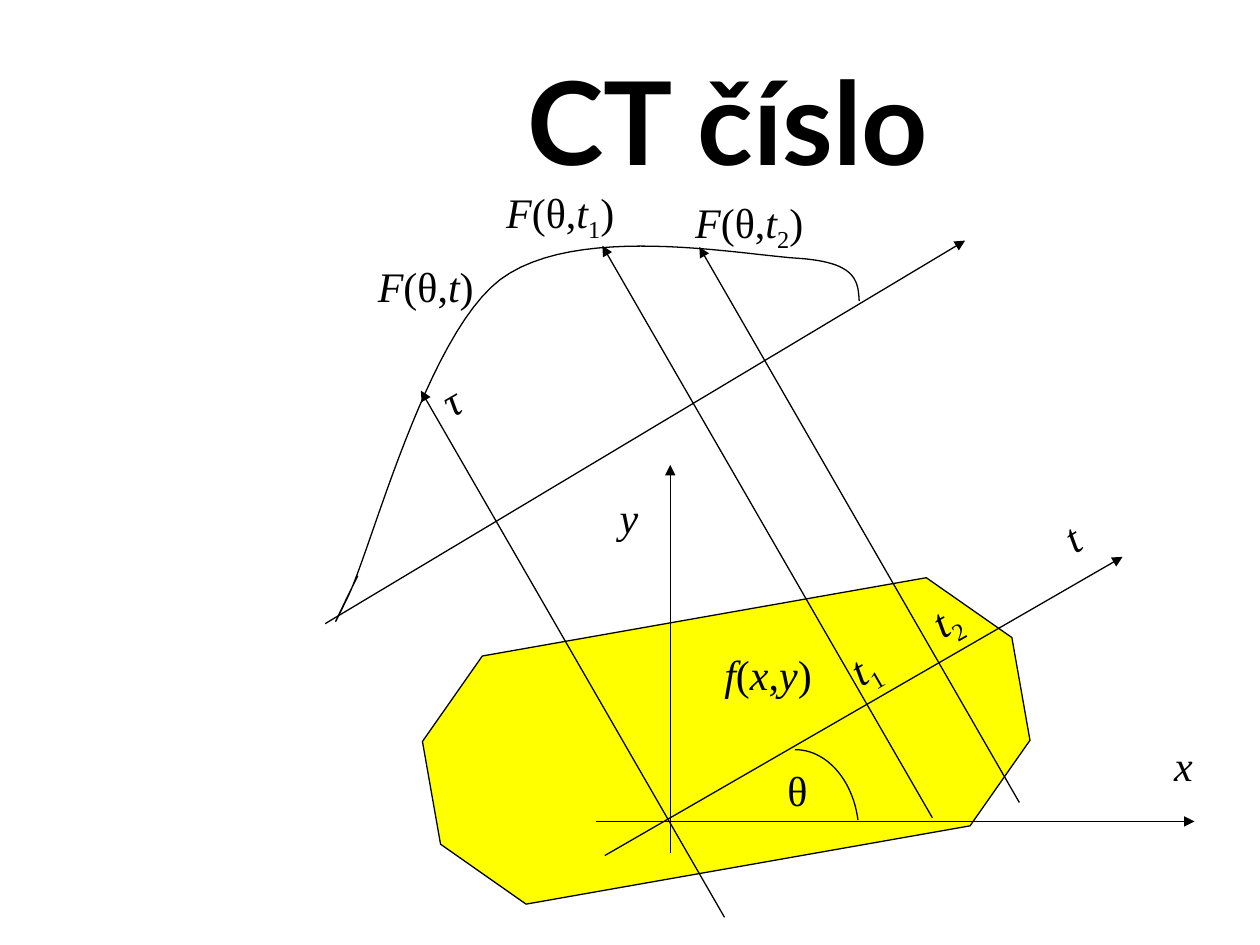
from itertools import groupby
from lxml import etree
from pptx import Presentation
from pptx.dml.color import RGBColor
from pptx.enum.shapes import MSO_CONNECTOR, MSO_SHAPE
from pptx.enum.text import MSO_ANCHOR, MSO_AUTO_SIZE, PP_ALIGN
from pptx.oxml import parse_xml
from pptx.oxml.ns import nsdecls, qn
from pptx.util import Pt


def rgb(value):
    return RGBColor.from_string(value)


def set_line(s):
    s.line.color.rgb = rgb("000000")
    s.line.width = Pt(0.75)


prs = Presentation()
prs.slide_width, prs.slide_height = Pt(720), Pt(540)
slide = prs.slides.add_slide(prs.slide_layouts[6])
sp = slide.shapes

# Title
tf = sp.add_textbox(Pt(146), Pt(15), Pt(540), Pt(96.5)).text_frame
tf.word_wrap = True
tf.vertical_anchor = MSO_ANCHOR.BOTTOM
p = tf.paragraphs[0]
p.alignment = PP_ALIGN.CENTER
r = p.add_run()
r.text = "CT číslo"
for name, value in {"name": "Lato", "size": Pt(66), "bold": True}.items():
    setattr(r.font, name, value)
r.font.color.rgb = rgb("000000")
r.font._element.insert(0, parse_xml(
    f'<a:ln {nsdecls("a")} w="19050"><a:solidFill><a:srgbClr val="000000"/></a:solidFill></a:ln>'))

# Scanned object
s = sp.add_shape(MSO_SHAPE.OCTAGON, Pt(244), Pt(351.4), Pt(342), Pt(144))
s.adjustments[0] = 0.293
s.rotation = -10
s.shadow.inherit = False
s.fill.solid()
s.fill.fore_color.rgb = rgb("FFFF00")
set_line(s)

# Axes and projection rays
arrows = [
    (340.6, 469.4, 682.6, 469.4),  # x axis
    (383, 487.4, 383, 265.7),  # y axis
    (345.6, 488.9, 641.5, 318.2),  # t axis
    (185.8, 356.4, 551.5, 137.5),  # projection axis
    (414, 524.2, 240.5, 223.2),  # ray through the origin
    (532.8, 467.3, 344.2, 140.4),  # ray at t1
    (582.5, 458.6, 399.6, 141.1),  # ray at t2
]
for ends in arrows:
    s = sp.add_connector(MSO_CONNECTOR.STRAIGHT, *map(Pt, ends))
    set_line(s)
    etree.SubElement(s.line._get_or_add_ln(), qn("a:tailEnd"), type="triangle")
    etree.SubElement(s._element.spPr, qn("a:effectLst"))

# Each curve is a chain of cubic Béziers: a start, then three points a segment
angle_arc = [(454.3, 428.4), (472.3, 428.4), (487.4, 445.7), (490.3, 468.7)]
profile = [
    (491, 172.1), (490.3, 160.6), (489.6, 149.8), (455.8, 147.6),
    (421.9, 145.4), (329, 127.4), (285.8, 159.8),
    (243.4, 192.2), (212.4, 313.2), (198.7, 341.3),
    (185, 369.4), (194.4, 349.2), (204.5, 329),
]
STEPS = 24
for curve in (angle_arc, profile):
    points = []
    for i in range(0, len(curve) - 1, 3):
        for step in range(1, STEPS + 1):
            u = step / STEPS
            weights = ((1 - u) ** 3, 3 * u * (1 - u) ** 2, 3 * u * u * (1 - u), u ** 3)
            points.append(tuple(Pt(sum(w * c for w, c in zip(weights, axis)))
                                for axis in zip(*curve[i:i + 4])))
    builder = sp.build_freeform(*map(Pt, curve[0]))
    builder.add_line_segments(points, close=False)
    s = builder.convert_to_shape()
    s.shadow.inherit = False
    s.fill.background()
    set_line(s)

# Labels: variables are italic, digits are subscripts
labels = [
    ("x", 663.8, 419, 25.2, 0),
    ("y", 347, 277.2, 25.2, 0),
    ("t", 601.9, 288.7, 20.9, -30),
    ("θ", 442.8, 433.4, 25.9, 0),
    ("f(x,y)", 406.8, 367.2, 68, 0),
    ("F(θ,t)", 208.8, 145.4, 70, 0),
    ("t2", 525.6, 334.1, 34.6, -30),
    ("t1", 478.8, 361.4, 34.6, -30),
    ("F(θ,t1)", 282.2, 103, 77, 0),
    ("F(θ,t2)", 390.2, 108.7, 77, 0),
    ("τ", 246.2, 211, 20.9, -30),
]
for text, left, top, width, angle in labels:
    s = sp.add_textbox(Pt(left), Pt(top), Pt(width), Pt(36))
    s.rotation = angle
    tf = s.text_frame
    tf.word_wrap = False
    tf.auto_size = MSO_AUTO_SIZE.SHAPE_TO_FIT_TEXT
    for (italic, subscript), chars in groupby(text, lambda c: (c in "Fftxyτ", c.isdigit())):
        r = tf.paragraphs[0].add_run()
        r.text = "".join(chars)
        font = {"name": "Times New Roman", "size": Pt(24), "italic": italic}
        for name, value in font.items():
            setattr(r.font, name, value)
        r.font.color.rgb = rgb("000000")
        if subscript:
            r.font._element.set("baseline", "-25000")

prs.save("out.pptx")
